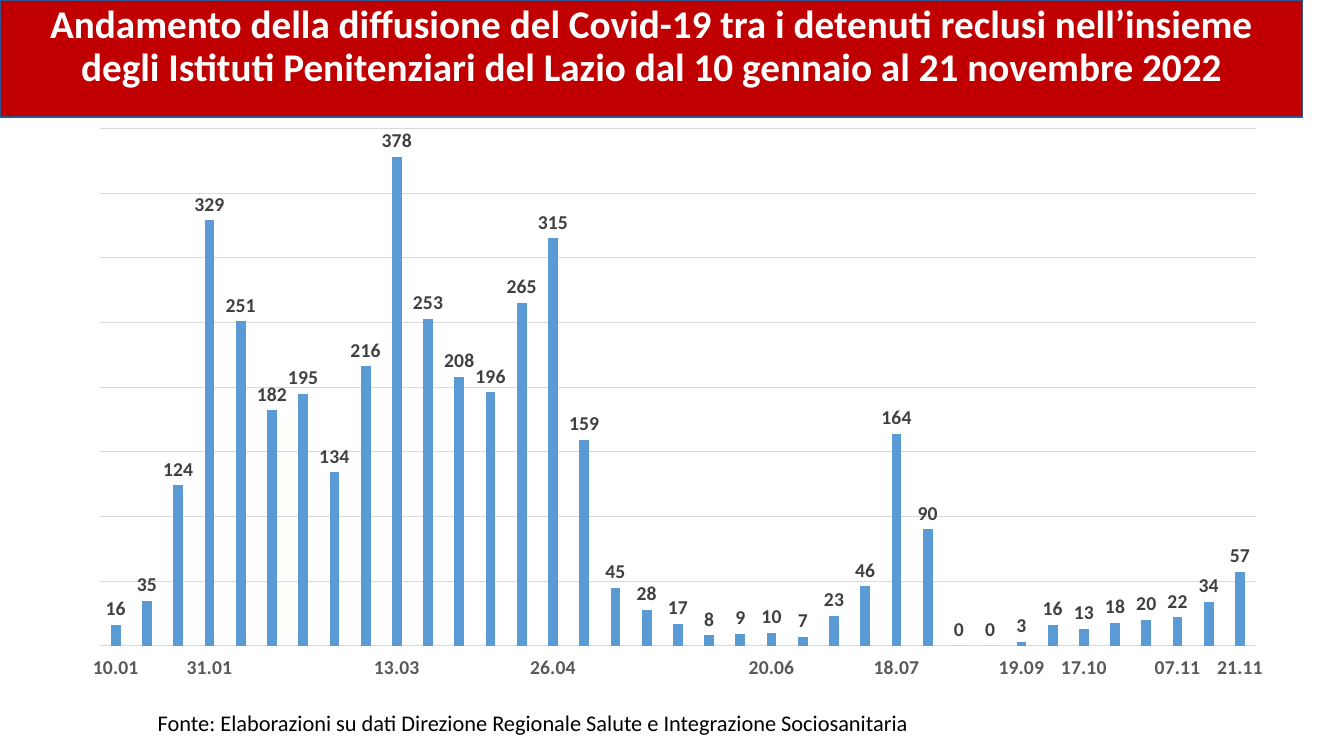
from dataclasses import dataclass

from lxml import etree
from pptx import Presentation
from pptx.chart.data import CategoryChartData
from pptx.dml.color import RGBColor
from pptx.enum.chart import XL_CHART_TYPE, XL_LABEL_POSITION, XL_TICK_LABEL_POSITION, XL_TICK_MARK
from pptx.enum.text import MSO_ANCHOR, MSO_AUTO_SIZE, PP_ALIGN
from pptx.oxml import parse_xml
from pptx.oxml.ns import nsdecls, qn
from pptx.util import Inches, Pt


@dataclass(frozen=True)
class Theme:
    font: str = "Calibri"
    banner: RGBColor = RGBColor(0xC0, 0x00, 0x00)
    banner_line: RGBColor = RGBColor(0x32, 0x54, 0x91)
    banner_text: RGBColor = RGBColor(0xFF, 0xFF, 0xFF)
    bar: RGBColor = RGBColor(0x5B, 0x9B, 0xD5)
    grid: RGBColor = RGBColor(0xD9, 0xD9, 0xD9)
    axis_text: RGBColor = RGBColor(0x59, 0x59, 0x59)
    label_text: RGBColor = RGBColor(0x40, 0x40, 0x40)
    text: RGBColor = RGBColor(0x00, 0x00, 0x00)
    title_size: Pt = Pt(28)
    source_size: Pt = Pt(16)
    label_size: Pt = Pt(14)
    chart_size: Pt = Pt(10)


THEME = Theme()
WIDTH, HEIGHT = Inches(13.33), Inches(7.5)

TITLE = ("Andamento della diffusione del Covid-19 tra i detenuti reclusi nell’insieme "
         "degli Istituti Penitenziari del Lazio dal 10 gennaio al 21 novembre 2022")
SOURCE = "Fonte: Elaborazioni su dati Direzione Regionale Salute e Integrazione Sociosanitaria"
CASES = [16, 35, 124, 329, 251, 182, 195, 134, 216, 378, 253, 208, 196, 265, 315, 159, 45, 28, 17,
         8, 9, 10, 7, 23, 46, 164, 90, 0, 0, 3, 16, 13, 18, 20, 22, 34, 57]
# Position of each survey whose date is shown on the axis
DATES = {0: "10.01", 3: "31.01", 9: "13.03", 14: "26.04", 21: "20.06", 25: "18.07",
         29: "19.09", 31: "17.10", 34: "07.11", 36: "21.11"}


def share_box(left, top, width, height):
    """Turn shares of the slide's size into a box in EMU."""
    return int(left * WIDTH), int(top * HEIGHT), int(width * WIDTH), int(height * HEIGHT)


def style_font(font, size, color, bold=False):
    font.name, font.size, font.bold = THEME.font, size, bold
    font.color.rgb = color


def add_banner(slide, box):
    banner = slide.shapes.title
    banner.left, banner.top, banner.width, banner.height = box
    banner.fill.solid()
    banner.fill.fore_color.rgb = THEME.banner
    banner.line.color.rgb = THEME.banner_line
    banner.line.width = Pt(1)
    frame = banner.text_frame
    frame.text = TITLE
    frame.word_wrap = True
    frame.auto_size = MSO_AUTO_SIZE.NONE
    frame.vertical_anchor = MSO_ANCHOR.TOP
    heading = frame.paragraphs[0]
    heading.alignment = PP_ALIGN.CENTER
    heading.line_spacing = 0.9
    style_font(heading.font, THEME.title_size, THEME.banner_text, bold=True)


def set_plot_layout(chart, **shares):
    """Fix the inner plot area, in shares of the chart's size."""
    plot_area = chart.plots[0]._element.getparent()
    for old in plot_area.findall(qn("c:layout")):
        plot_area.remove(old)
    sizes = "".join(f'<c:{name} val="{share}"/>' for name, share in shares.items())
    plot_area.insert(0, parse_xml(
        f'<c:layout {nsdecls("c")}><c:manualLayout><c:layoutTarget val="inner"/>'
        f'<c:xMode val="edge"/><c:yMode val="edge"/>{sizes}</c:manualLayout></c:layout>'))


def show_every_category(axis):
    skip = etree.Element(qn("c:tickLblSkip"), val="1")
    axis._element.find(qn("c:noMultiLvlLbl")).addprevious(skip)


def add_cases_chart(slide, box):
    data = CategoryChartData()
    data.categories = [DATES.get(survey, "") for survey in range(len(CASES))]
    data.add_series("Detenuti positivi", CASES)
    chart = slide.shapes.add_chart(XL_CHART_TYPE.COLUMN_CLUSTERED, *box, data).chart
    chart.has_legend = chart.has_title = False
    style_font(chart.font, THEME.chart_size, THEME.text)
    set_plot_layout(chart, x=0.026, y=0.02, w=0.95, h=0.91)

    dates = chart.category_axis
    dates.major_tick_mark = XL_TICK_MARK.NONE
    dates.tick_label_position = XL_TICK_LABEL_POSITION.LOW
    style_font(dates.tick_labels.font, THEME.label_size, THEME.axis_text, bold=True)
    show_every_category(dates)

    counts = chart.value_axis
    counts.visible = False
    counts.minimum_scale, counts.maximum_scale, counts.major_unit = 0, 400, 50
    for line in (dates.format.line, counts.major_gridlines.format.line):
        line.color.rgb = THEME.grid
        line.width = Pt(0.75)

    bars = chart.plots[0]
    bars.gap_width, bars.overlap, bars.vary_by_categories = 219, -27, False
    bars.series[0].format.fill.solid()
    bars.series[0].format.fill.fore_color.rgb = THEME.bar
    labels = bars.series[0].data_labels
    labels.show_value = True
    labels.position = XL_LABEL_POSITION.OUTSIDE_END
    style_font(labels.font, THEME.label_size, THEME.label_text, bold=True)


def add_source(slide, box):
    frame = slide.shapes.add_textbox(*box).text_frame
    frame.text = SOURCE
    frame.word_wrap = False
    frame.auto_size = MSO_AUTO_SIZE.SHAPE_TO_FIT_TEXT
    style_font(frame.paragraphs[0].font, THEME.source_size, THEME.text)


def main():
    deck = Presentation()
    deck.slide_width, deck.slide_height = WIDTH, HEIGHT
    slide = deck.slides.add_slide(deck.slide_layouts.get_by_name("Title Only"))
    add_banner(slide, share_box(0, 0, 0.969, 0.155))
    add_cases_chart(slide, share_box(0.051, 0.155, 0.905, 0.752))
    add_source(slide, share_box(0.11, 0.931, 0.588, 0.049))
    deck.save("out.pptx")


if __name__ == "__main__":
    main()
